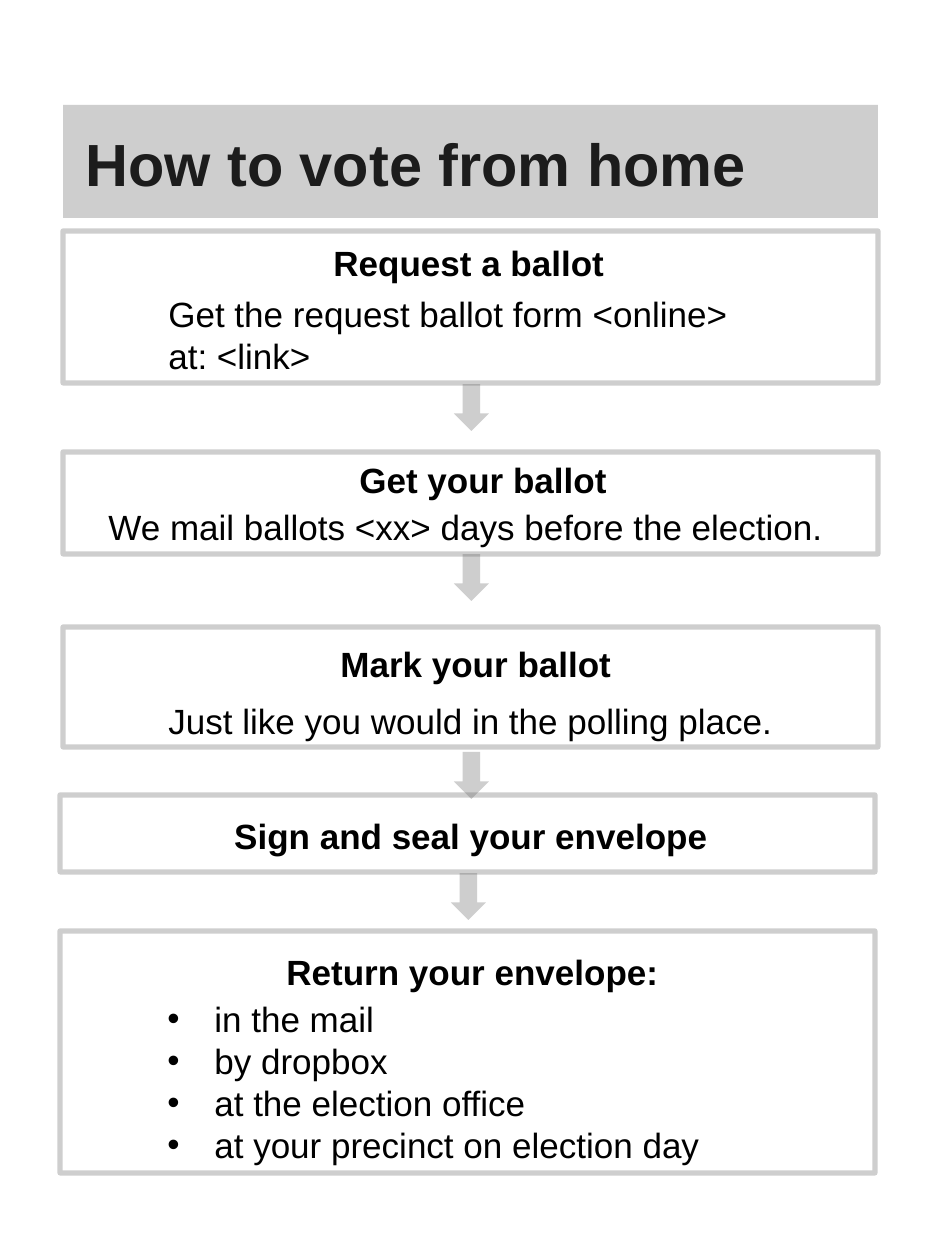
from dataclasses import dataclass
from lxml.etree import SubElement
from pptx import Presentation
from pptx.dml.color import RGBColor
from pptx.enum.shapes import MSO_SHAPE
from pptx.enum.text import MSO_ANCHOR, PP_ALIGN
from pptx.oxml.ns import qn
from pptx.util import Pt


@dataclass(frozen=True)
class Theme:
    font: str = "Arial"
    ink: RGBColor = RGBColor(0, 0, 0)
    gray: RGBColor = RGBColor(0x5F, 0x5F, 0x5F)
    alpha: int = 30
    title: int = 34
    body: int = 20
    edge: int = 3


THEME = Theme()
LEFT, CENTER = PP_ALIGN.LEFT, PP_ALIGN.CENTER

STEPS = [
    dict(box=(63, 231, 815, 152), head="Request a ballot", spot=(258, 4, 319, 55),
         lines=["Get the request ballot form <online> at: <link>"],
         area=(93, 55, 630, 97), gap=1),
    dict(box=(63, 452, 815, 102), head="Get your ballot", spot=(284, 0, 292, 55),
         lines=["We mail ballots <xx> days before the election."],
         area=(33, 47, 746, 55), gap=0),
    dict(box=(63, 627, 815, 120), head="Mark your ballot", spot=(265, 9, 306, 55),
         lines=["Just like you would in the polling place."],
         area=(93, 66, 721, 55), gap=5),
    dict(box=(60, 795, 815, 77), head="Sign and seal your envelope",
         spot=(79, 13, 664, 55), align=CENTER, gap=1),
    dict(box=(60, 931, 815, 242), head="Return your envelope:",
         spot=(126, 13, 573, 55), align=CENTER,
         lines=["in the mail", "by dropbox", "at the election office",
                "at your precinct on election day"],
         area=(95, 60, 721, 183), dots=True),
]


def px(n):
    return round(n * 914400 / 126)


def inner(box, part):
    return (box[0] + part[0], box[1] + part[1], part[2], part[3])


def tint(fill, owner):
    fill.solid()
    fill.fore_color.rgb = THEME.gray
    for color in owner.iter(qn("a:srgbClr")):
        SubElement(color, qn("a:alpha"), val=str(THEME.alpha * 1000))


def add_shape(slide, kind, box, filled=True):
    shape = slide.shapes.add_shape(kind, *map(px, box))
    shape.shadow.inherit = False
    if filled:
        shape.line.fill.background()
        tint(shape.fill, shape.fill._xPr)
    else:
        shape.fill.background()
        shape.line.width = Pt(THEME.edge)
        tint(shape.line.fill, shape.line._ln)
    return shape


def add_run(para, text, size, bold=False):
    run = para.add_run()
    run.text = text
    font = run.font
    font.name, font.size, font.bold = THEME.font, Pt(size), bold
    font.color.rgb = THEME.ink


def add_dot(para):
    props = para._p.get_or_add_pPr()
    props.set("marL", str(px(47)))
    props.set("indent", str(px(-47)))
    SubElement(props, qn("a:buFont"), typeface=THEME.font)
    SubElement(props, qn("a:buChar"), char="•")


def add_text(slide, box, lines, bold=False, align=LEFT, dots=False):
    frame = slide.shapes.add_textbox(*map(px, box)).text_frame
    frame.word_wrap = True
    for i, line in enumerate(lines):
        para = frame.add_paragraph() if i else frame.paragraphs[0]
        para.alignment = align
        if dots:
            add_dot(para)
        add_run(para, line, THEME.body, bold)


def add_title(slide, box, text):
    add_shape(slide, MSO_SHAPE.RECTANGLE, box)
    title = slide.shapes.title
    spot = inner(box, (10, 16, 803, 84))
    title.left, title.top, title.width, title.height = map(px, spot)
    frame = title.text_frame
    frame.word_wrap = True
    frame.vertical_anchor = MSO_ANCHOR.MIDDLE
    para = frame.paragraphs[0]
    para.alignment = LEFT
    add_run(para, text, THEME.title, True)


def add_step(slide, box, head, spot, lines=(), area=None,
             align=LEFT, dots=False, gap=None):
    add_shape(slide, MSO_SHAPE.RECTANGLE, box, filled=False)
    add_text(slide, inner(box, spot), [head], True, align)
    if lines:
        add_text(slide, inner(box, area), lines, dots=dots)
    if gap is not None:
        add_shape(slide, MSO_SHAPE.DOWN_ARROW,
                  inner(box, (391, box[3] + gap, 35, 47)))


def main():
    deck = Presentation()
    deck.slide_width, deck.slide_height = px(945), px(1260)
    slide = deck.slides.add_slide(deck.slide_layouts[5])
    add_title(slide, (63, 105, 815, 113), "How to vote from home")
    for step in STEPS:
        add_step(slide, **step)
    deck.save("out.pptx")


if __name__ == "__main__":
    main()
